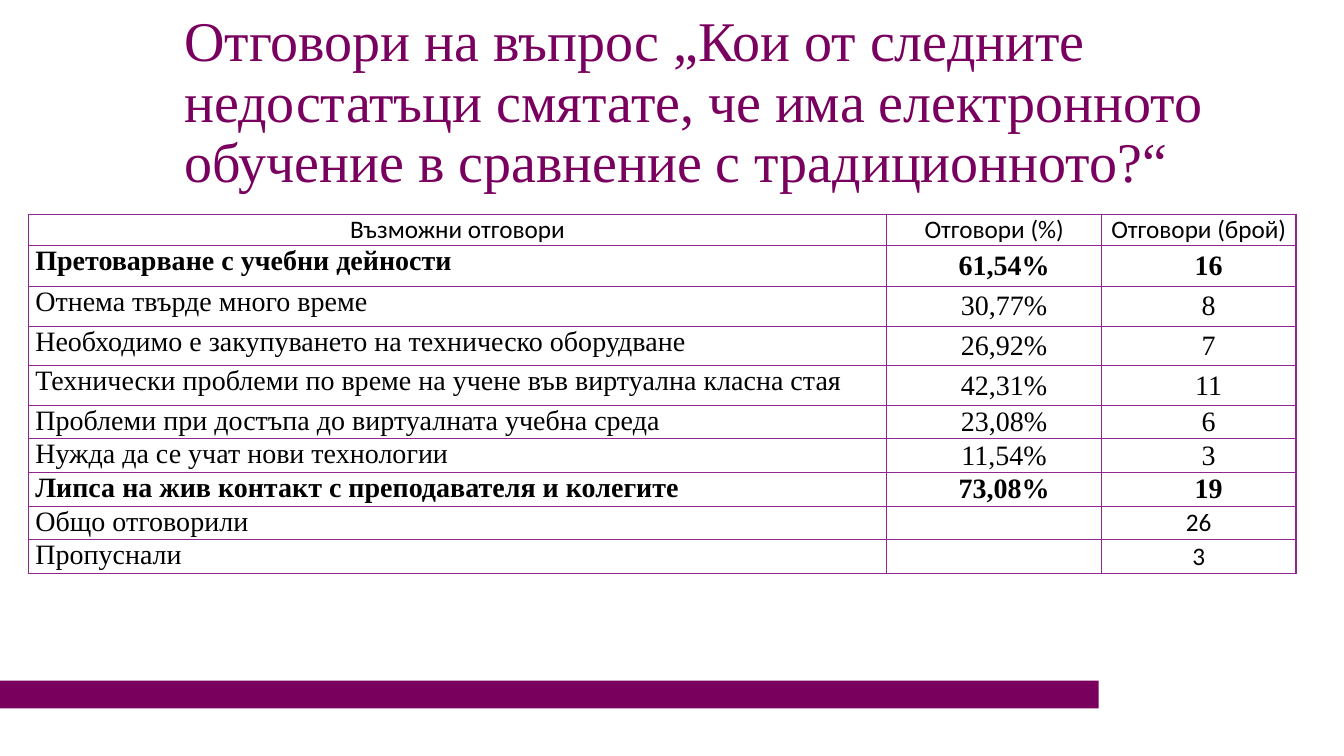
import pptx
import pptx.util
import pptx.dml.color
import pptx.enum.shapes
import pptx.enum.text
import pptx.oxml
import pptx.oxml.ns

Cm, Pt = pptx.util.Cm, pptx.util.Pt
RGBColor = pptx.dml.color.RGBColor
PP_ALIGN = pptx.enum.text.PP_ALIGN
MSO_ANCHOR = pptx.enum.text.MSO_ANCHOR

TITLE = ("Отговори на въпрос „Кои от следните недостатъци смятате, "
         "че има електронното обучение в сравнение с традиционното?“")
HEADER = ("Възможни отговори", "Отговори (%)", "Отговори (брой)")
ANSWERS = [
    ("Претоварване с учебни дейности", "61,54%", "16"),
    ("Отнема твърде много време", "30,77%", "8"),
    ("Необходимо е закупуването на техническо оборудване", "26,92%", "7"),
    ("Технически проблеми по време на учене във виртуална класна стая", "42,31%", "11"),
    ("Проблеми при достъпа до виртуалната учебна среда", "23,08%", "6"),
    ("Нужда да се учат нови технологии", "11,54%", "3"),
    ("Липса на жив контакт с преподавателя и колегите", "73,08%", "19"),
]
TOTALS = [("Общо отговорили", "", "26"), ("Пропуснали", "", "3")]
LEADING_ANSWERS = (ANSWERS[0], ANSWERS[-1])

COL_WIDTHS = (21.64, 5.41, 4.9)
ROW_HEIGHTS = [0.79] + [1.02] * 2 + [0.99] * 2 + [0.79] * 5

PLUM = RGBColor(0x7A, 0x00, 0x5E)
TITLE_PLUM = RGBColor(0x7A, 0x00, 0x5F)
BLACK = RGBColor(0x00, 0x00, 0x00)
BORDER = "92278F"
SERIF, SANS = "Times New Roman", "Calibri"


def set_font(p, name, size, color, bold=False):
    p.font.name = name
    p.font.size = Pt(size)
    p.font.color.rgb = color
    p.font.bold = bold


def set_borders(cell):
    tcPr = cell._tc.get_or_add_tcPr()
    for i, side in enumerate(("lnL", "lnR", "lnT", "lnB")):
        tcPr.insert(i, pptx.oxml.parse_xml(
            f'<a:{side} {pptx.oxml.ns.nsdecls("a")} w="12700"><a:solidFill>'
            f'<a:srgbClr val="{BORDER}"/></a:solidFill></a:{side}>'))


def fill_cell(cell, row, col):
    text = row[col]
    cell.margin_left = cell.margin_right = Cm(0.18)
    cell.margin_top = cell.margin_bottom = 0
    cell.fill.background()
    set_borders(cell)
    p = cell.text_frame.paragraphs[0]
    p.text = text
    is_label = col == 0 and row != HEADER
    if is_label:
        cell.vertical_anchor = MSO_ANCHOR.TOP
    else:
        cell.vertical_anchor = MSO_ANCHOR.MIDDLE
        p.alignment = PP_ALIGN.CENTER
    if row in ANSWERS and col > 0:
        p._p.get_or_add_pPr().set("indent", str(Cm(0.5)))
    if is_label or row in ANSWERS:
        set_font(p, SERIF, 20, BLACK, row in LEADING_ANSWERS)
    else:
        set_font(p, SANS, 18, BLACK)


def main():
    prs = pptx.Presentation()
    prs.slide_width, prs.slide_height = Cm(33.87), Cm(19.05)
    s = prs.slides.add_slide(prs.slide_layouts[6])

    bar = s.shapes.add_shape(pptx.enum.shapes.MSO_SHAPE.RECTANGLE,
                             0, Cm(17.15), Cm(27.69), Cm(0.7))
    bar.shadow.inherit = False
    bar.fill.solid()
    bar.fill.fore_color.rgb = PLUM
    bar.line.fill.background()

    title = s.shapes.add_textbox(Cm(4.4), Cm(0.79), Cm(27.13), Cm(3.68))
    tf = title.text_frame
    tf.word_wrap = True
    tf.vertical_anchor = MSO_ANCHOR.MIDDLE
    p = tf.paragraphs[0]
    p.text = TITLE
    p.line_spacing = 0.9
    set_font(p, SERIF, 40, TITLE_PLUM)

    rows = [HEADER] + ANSWERS + TOTALS
    table = s.shapes.add_table(len(rows), len(HEADER), Cm(0.71), Cm(5.4),
                               Cm(sum(COL_WIDTHS)), Cm(sum(ROW_HEIGHTS))).table
    table.first_row = table.horz_banding = False
    for column, width in zip(table.columns, COL_WIDTHS):
        column.width = Cm(width)
    for i, (row, height) in enumerate(zip(rows, ROW_HEIGHTS)):
        table.rows[i].height = Cm(height)
        for j in range(len(row)):
            fill_cell(table.cell(i, j), row, j)

    prs.save("out.pptx")


if __name__ == "__main__":
    main()
